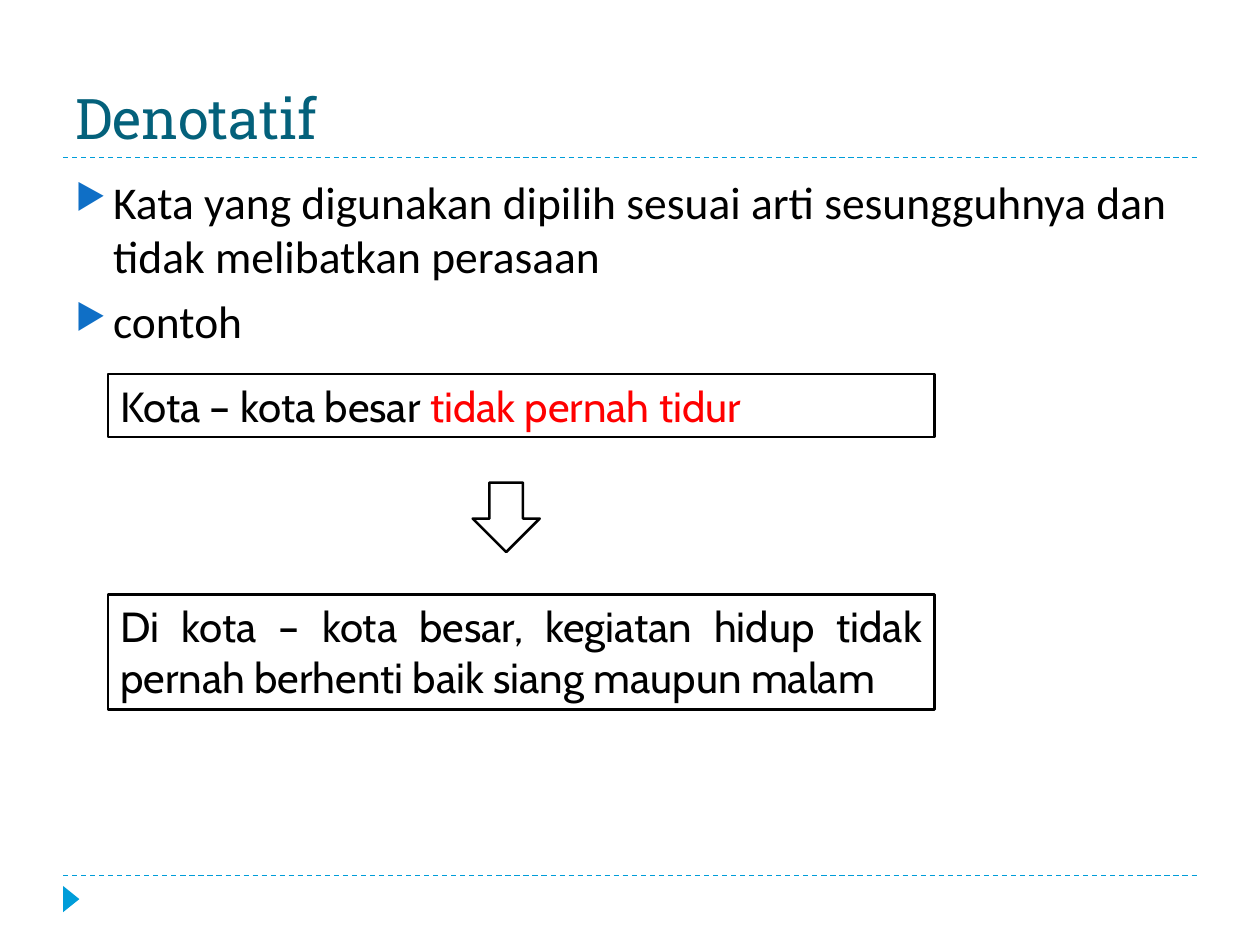
from lxml.etree import SubElement
from pptx import Presentation
from pptx.dml.color import RGBColor
from pptx.enum.dml import MSO_LINE_DASH_STYLE as Dash
from pptx.enum.shapes import MSO_CONNECTOR as Connector, MSO_SHAPE as Shape
from pptx.enum.text import MSO_ANCHOR as Anchor, MSO_AUTO_SIZE as AutoSize, PP_ALIGN as Align
from pptx.oxml.ns import qn
from pptx.util import Cm, Pt

COLORS = {
    "title": "04617B",
    "accent": "009DD9",
    "bullet": "0F6FC6",
    "text": "000000",
    "highlight": "FF0000",
    "paper": "FFFFFF",
}
TITLE_FONT = {"name": "Roboto Slab", "size": Pt(32)}
BODY_FONT = {"name": "Calibri", "size": Pt(26)}
BOX_FONT = {"name": "Cabin", "size": Pt(24)}
PLAIN_FRAME = {"word_wrap": True, "auto_size": AutoSize.NONE, "vertical_anchor": Anchor.TOP}
GROWING_FRAME = {**PLAIN_FRAME, "auto_size": AutoSize.SHAPE_TO_FIT_TEXT}
TITLE_FRAME = {**PLAIN_FRAME, "vertical_anchor": Anchor.BOTTOM}


def color(name):
    """Return the named colour."""
    return RGBColor.from_string(COLORS[name])


def apply(target, values):
    """Set each format value on the target."""
    for name, value in values.items():
        setattr(target, name, value)


def place(shape, left, top, width, height):
    """Position a shape, in centimetres."""
    apply(shape, {"left": Cm(left), "top": Cm(top), "width": Cm(width), "height": Cm(height)})


def add_span(para, text, font, color_name="text"):
    """Append formatted text to a paragraph."""
    span = para.add_run()
    span.text = text
    apply(span.font, font)
    span.font.color.rgb = color(color_name)


def add_rule(page, top):
    """Draw a dashed rule across the page."""
    rule = page.shapes.add_connector(Connector.STRAIGHT, Cm(1.27), Cm(top), Cm(24.13), Cm(top))
    apply(rule.line, {"width": Pt(0.75), "dash_style": Dash.DASH})
    rule.line.color.rgb = color("accent")
    SubElement(rule._element.spPr, qn("a:effectLst"))


def add_figure(page, kind, bounds, fill="paper", outline="text"):
    """Add a filled shape with an optional outline."""
    figure = page.shapes.add_shape(kind, *map(Cm, bounds))
    figure.shadow.inherit = False
    figure.fill.solid()
    figure.fill.fore_color.rgb = color(fill)
    if outline:
        figure.line.color.rgb = color(outline)
        figure.line.width = Pt(1.5)
    else:
        figure.line.fill.background()
    return figure


def add_sentence_box(page, top, height, spans):
    """Add an outlined box holding a justified sentence."""
    box = add_figure(page, Shape.RECTANGLE, (2.18, top, 16.66, height))
    apply(box.text_frame, GROWING_FRAME)
    para = box.text_frame.paragraphs[0]
    para.alignment = Align.JUSTIFY
    for text, color_name in spans:
        add_span(para, text, BOX_FONT, color_name)


def add_bullet(para):
    """Give a paragraph a triangular bullet and a hanging indent."""
    para.space_before = Pt(6)
    properties = para._p.get_or_add_pPr()
    properties.set("marL", str(Cm(0.76)))
    properties.set("indent", str(-Cm(0.76)))
    bullet_color = SubElement(properties, qn("a:buClr"))
    SubElement(bullet_color, qn("a:srgbClr"), val=COLORS["bullet"])
    SubElement(properties, qn("a:buSzPct"), val="76000")
    SubElement(properties, qn("a:buChar"), char="▶")


def add_bullet_list(page, items):
    """Add the bulleted body text."""
    box = page.shapes.add_textbox(Cm(1.27), Cm(3.38), Cm(22.86), Cm(13.72))
    frame = box.text_frame
    apply(frame, PLAIN_FRAME)
    for index, item in enumerate(items):
        para = frame.add_paragraph() if index else frame.paragraphs[0]
        add_bullet(para)
        add_span(para, item, BODY_FONT)


def set_title(page, text):
    """Fill and format the title placeholder."""
    title = page.shapes.title
    place(title, 1.27, 0.43, 22.86, 2.74)
    apply(title.text_frame, TITLE_FRAME)
    para = title.text_frame.paragraphs[0]
    para.alignment = Align.LEFT
    add_span(para, text, TITLE_FONT, "title")


def main():
    """Build the slide and save it."""
    deck = Presentation()
    apply(deck, {"slide_width": Cm(25.4), "slide_height": Cm(19.05)})
    page = deck.slides.add_slide(deck.slide_layouts[5])
    for top in (17.65, 3.18):
        add_rule(page, top)
    marker = add_figure(page, Shape.ISOSCELES_TRIANGLE, (1.17, 17.96, 0.53, 0.33), "accent", None)
    marker.rotation = 90
    set_title(page, "Denotatif")
    add_bullet_list(page, (
        "Kata yang digunakan dipilih sesuai arti sesungguhnya dan tidak melibatkan perasaan",
        "contoh",
    ))
    add_sentence_box(page, 7.54, 1.27, (
        ("Kota – kota besar ", "text"),
        ("tidak pernah tidur ", "highlight"),
    ))
    add_sentence_box(page, 11.99, 2.31, (
        ("Di kota – kota besar, kegiatan hidup tidak pernah berhenti baik siang maupun malam ", "text"),
    ))
    add_figure(page, Shape.DOWN_ARROW, (9.53, 9.73, 1.35, 1.4))
    deck.save("out.pptx")


if __name__ == "__main__":
    main()
